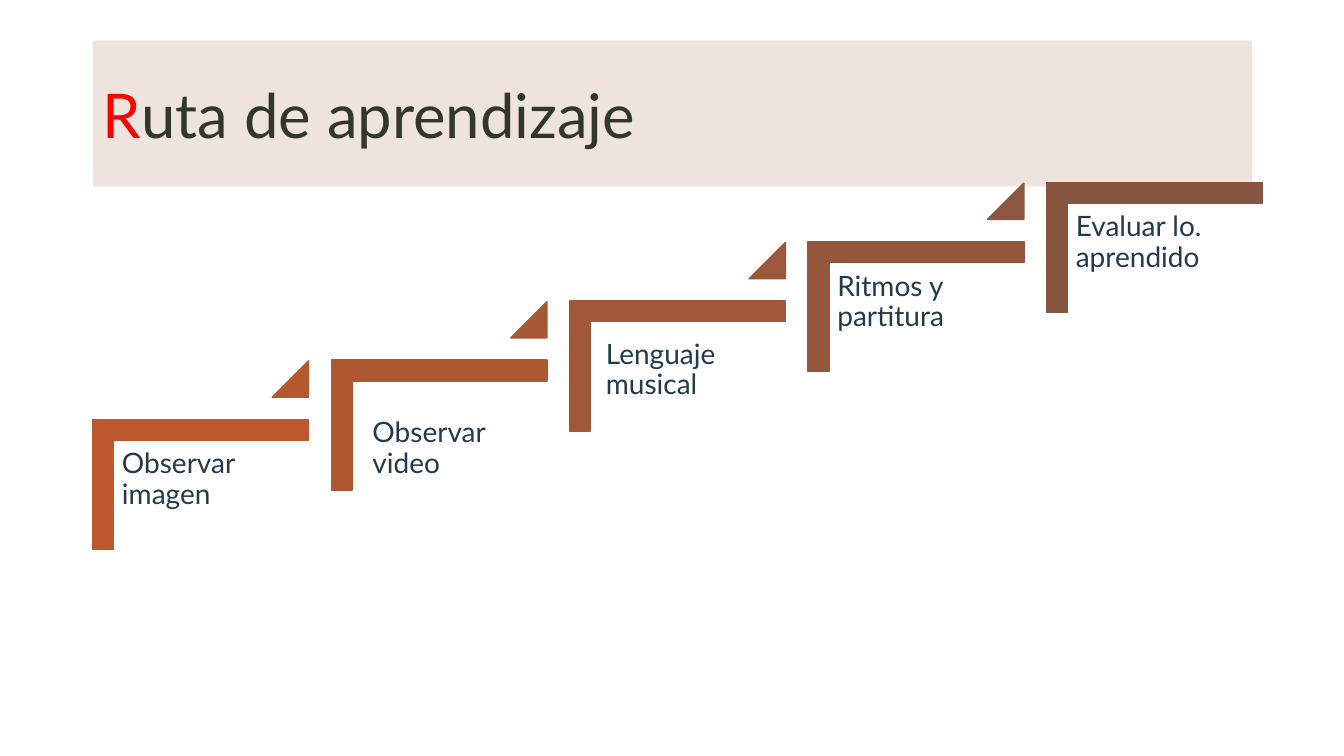
from lxml import etree
from pptx import Presentation
from pptx.dml.color import RGBColor
from pptx.enum.shapes import MSO_SHAPE
from pptx.enum.text import MSO_ANCHOR, PP_ALIGN
from pptx.oxml.ns import qn
from pptx.util import Emu, Pt

CORNER, TRIANGLE = MSO_SHAPE.CORNER, MSO_SHAPE.RIGHT_TRIANGLE
TRIANGLE = MSO_SHAPE.ISOSCELES_TRIANGLE
LEFT, TOP, MIDDLE = PP_ALIGN.LEFT, MSO_ANCHOR.TOP, MSO_ANCHOR.MIDDLE

PX = 9144  # 100 px to the inch
FONT = "Lato"
STEP_W, STEP_H = 214, 129
RISE_X, RISE_Y = 236.5, 58.75
ARROW = 36

# label, step colour, colour of the arrow to the next step, label shift
STEPS = [
    ("Observar imagen", "BD582C", "B6582F", (0, 0)),
    ("Observar video", "AE5832", "A75835", (12, 28)),
    ("Lenguaje musical", "A05837", "9A573A", (7, 9)),
    ("Ritmos y partitura", "93573C", "8C573E", (0, 0)),
    ("Evaluar lo. aprendido", "865640", None, (0, 0)),
]


def px(*lengths):
    return [Emu(round(length * PX)) for length in lengths]


def rgb(value):
    return RGBColor.from_string(value)


def add_run(paragraph, text, size, colour):
    run = paragraph.add_run()
    run.text = text
    run.font.name = FONT
    run.font.size = Pt(size)
    run.font.color.rgb = rgb(colour)


def add_solid(slide, preset, box, colour, adjustments):
    solid = slide.shapes.add_shape(preset, *px(*box))
    solid.shadow.inherit = False
    solid.fill.solid()
    solid.fill.fore_color.rgb = rgb(colour)
    solid.line.color.rgb = rgb(colour)
    solid.line.width = Pt(1)
    for i, value in enumerate(adjustments):
        solid.adjustments[i] = value
    return solid


def add_heading(slide, left, top, width, height):
    heading = slide.shapes.title
    heading.left, heading.top, heading.width, heading.height = px(left, top, width, height)
    heading.fill.solid()
    heading.fill.fore_color.rgb = rgb("EBDCD5")
    tint = heading.fill._xPr.find(qn("a:solidFill"))[0]
    etree.SubElement(tint, qn("a:alpha"), val="80000")
    frame = heading.text_frame
    frame.word_wrap = True
    frame.vertical_anchor = MIDDLE
    line = frame.paragraphs[0]
    line.alignment = LEFT
    add_run(line, "R", 44, "FF0000")
    add_run(line, "uta de aprendizaje", 44, "313829")


def add_label(slide, left, top, text):
    label = slide.shapes.add_textbox(*px(left, top, 193, 169))
    frame = label.text_frame
    frame.word_wrap = True
    frame.vertical_anchor = TOP
    frame.margin_left, frame.margin_top, frame.margin_right, frame.margin_bottom = px(8, 8, 8, 8)
    line = frame.paragraphs[0]
    line.alignment = LEFT
    line.line_spacing = 0.9
    add_run(line, text, 20, "203A4E")


def add_step(slide, left, top, text, colour, arrow_colour, shift):
    """Draw one stair; the corner is turned a quarter, so its own box is upright."""
    inset = (STEP_W - STEP_H) / 2
    stair = add_solid(slide, CORNER, (left + inset, top - inset, STEP_H, STEP_W),
                      colour, (0.161, 0.161))
    stair.rotation = 90
    add_label(slide, left + 21 + shift[0], top + 22 + shift[1], text)
    if arrow_colour:
        add_solid(slide, TRIANGLE, (left + STEP_W - ARROW, top - 58, ARROW, ARROW),
                  arrow_colour, (1,))


def add_staircase(slide, left, bottom):
    for i, step in enumerate(STEPS):
        add_step(slide, left + i * RISE_X, bottom - STEP_H - i * RISE_Y, *step)


def main():
    deck = Presentation()
    deck.slide_width, deck.slide_height = px(1333, 750)
    slide = deck.slides.add_slide(deck.slide_layouts[5])
    add_heading(slide, 92, 40, 1150, 145)
    add_staircase(slide, 92, 545)
    deck.save("out.pptx")


if __name__ == "__main__":
    main()
